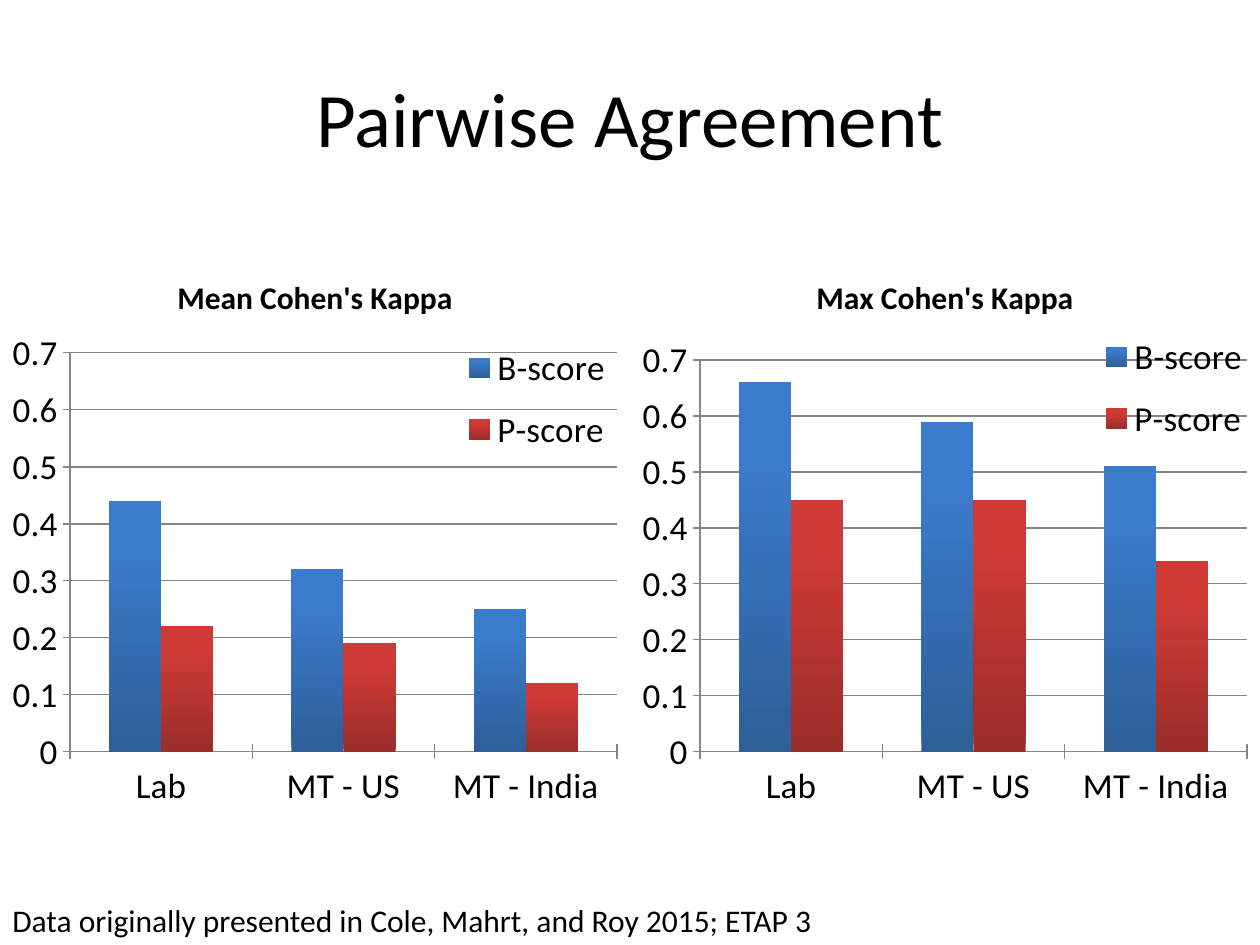
from lxml import etree
from pptx import Presentation, util as u
from pptx.chart.data import CategoryChartData
from pptx.dml.color import RGBColor
from pptx.enum import chart as ch, text
from pptx.oxml.ns import qn

BLACK = RGBColor(0, 0, 0)
GREY = RGBColor(0x86, 0x86, 0x86)
BLUES = RGBColor(0x2E, 0x5F, 0x97), RGBColor(0x3A, 0x7B, 0xCB)
REDS = RGBColor(0x9B, 0x2D, 0x2A), RGBColor(0xCE, 0x3B, 0x37)
EMU_PER_PX = 914400 / 126
GROUPS = "Lab", "MT - US", "MT - India"


def px(length):
    return u.Emu(round(length * EMU_PER_PX))


def set_layout(element, area, size, inner=False):
    """Place a chart part by its area in px within a chart of the given size."""
    for old in element.findall(qn("c:layout")):
        element.remove(old)
    layout = etree.Element(qn("c:layout"))
    manual = etree.SubElement(layout, qn("c:manualLayout"))
    values = [("layoutTarget", "inner")] if inner else []
    values += [("xMode", "edge"), ("yMode", "edge")]
    fractions = (f"{part / size[i % 2]:.4f}" for i, part in enumerate(area))
    values += zip("xywh", fractions)
    for name, value in values:
        etree.SubElement(manual, qn(f"c:{name}")).set("val", value)
    position = element.find(qn("c:legendPos"))
    if position is None:
        element.insert(0, layout)
    else:
        position.addnext(layout)


class Slide:
    face = "Calibri"

    def __init__(self, deck):
        self.page = deck.slides.add_slide(deck.slide_layouts[6])

    def style(self, font, size, bold=False):
        font.name, font.size, font.bold = self.face, u.Pt(size), bold
        font.color.rgb = BLACK

    def add_span(self, para, words, size, bold=False):
        span = para.add_run()
        span.text = words
        self.style(span.font, size, bold)

    def text_box(self, area, words, size, wrap=True, centred=False):
        frame = self.page.shapes.add_textbox(*map(px, area)).text_frame
        frame.word_wrap = wrap
        if centred:
            frame.vertical_anchor = text.MSO_ANCHOR.MIDDLE
            frame.paragraphs[0].alignment = text.PP_ALIGN.CENTER
        else:
            frame.auto_size = text.MSO_AUTO_SIZE.SHAPE_TO_FIT_TEXT
        self.add_span(frame.paragraphs[0], words, size)

    def column_chart(self, area, title, scores, plot_area, legend_area):
        data = CategoryChartData()
        data.categories = GROUPS
        for name, values in scores.items():
            data.add_series(name, values)
        chart = self.page.shapes.add_chart(
            ch.XL_CHART_TYPE.COLUMN_CLUSTERED, *map(px, area), data).chart
        self.style(chart.font, 10)
        chart.has_title = True
        self.add_span(chart.chart_title.text_frame.paragraphs[0], title, 18, True)

        plot = chart.plots[0]
        plot.gap_width, plot.overlap, plot.vary_by_categories = 150, 0, False
        for series, colours in zip(plot.series, (BLUES, REDS)):
            series.invert_if_negative = False
            fill = series.format.fill
            fill.gradient()
            fill.gradient_angle = 90
            for stop, colour, place in zip(fill.gradient_stops, colours, (0, 0.8)):
                stop.color.rgb, stop.position = colour, place

        values = chart.value_axis
        values.minimum_scale, values.maximum_scale, values.major_unit = 0, 0.7, 0.1
        values.has_major_gridlines = True
        values.tick_labels.number_format = "General"
        values.tick_labels.number_format_is_linked = False
        for axis in (chart.category_axis, values):
            axis.major_tick_mark = ch.XL_TICK_MARK.CROSS
            self.style(axis.tick_labels.font, 20)
            axis.format.line.color.rgb = GREY
        values.major_gridlines.format.line.color.rgb = GREY

        chart.has_legend = True
        legend = chart.legend
        legend.position = ch.XL_LEGEND_POSITION.RIGHT
        legend.include_in_layout = True
        self.style(legend.font, 20)
        size = area[2:]
        plot_element = chart.element.find(".//" + qn("c:plotArea"))
        set_layout(plot_element, plot_area, size, inner=True)
        set_layout(chart.element.find(".//" + qn("c:legend")), legend_area, size)


def main():
    deck = Presentation()
    deck.slide_width, deck.slide_height = px(1260), px(945)
    slide = Slide(deck)
    slide.text_box((63, 38, 1134, 158), "Pairwise Agreement", 44, centred=True)
    slide.column_chart(
        (0, 252, 630, 567), "Mean Cohen's Kappa",
        {"B-score": (0.44, 0.32, 0.25), "P-score": (0.22, 0.19, 0.12)},
        (70, 101, 547, 399), (462, 76, 150, 142))
    slide.column_chart(
        (630, 252, 630, 567), "Max Cohen's Kappa",
        {"B-score": (0.66, 0.59, 0.51), "P-score": (0.45, 0.45, 0.34)},
        (70, 108, 547, 392), (472, 65, 150, 142))
    slide.text_box(
        (0, 895, 834, 50),
        "Data originally presented in Cole, Mahrt, and Roy 2015; ETAP 3", 18, wrap=False)
    deck.save("out.pptx")


if __name__ == "__main__":
    main()
